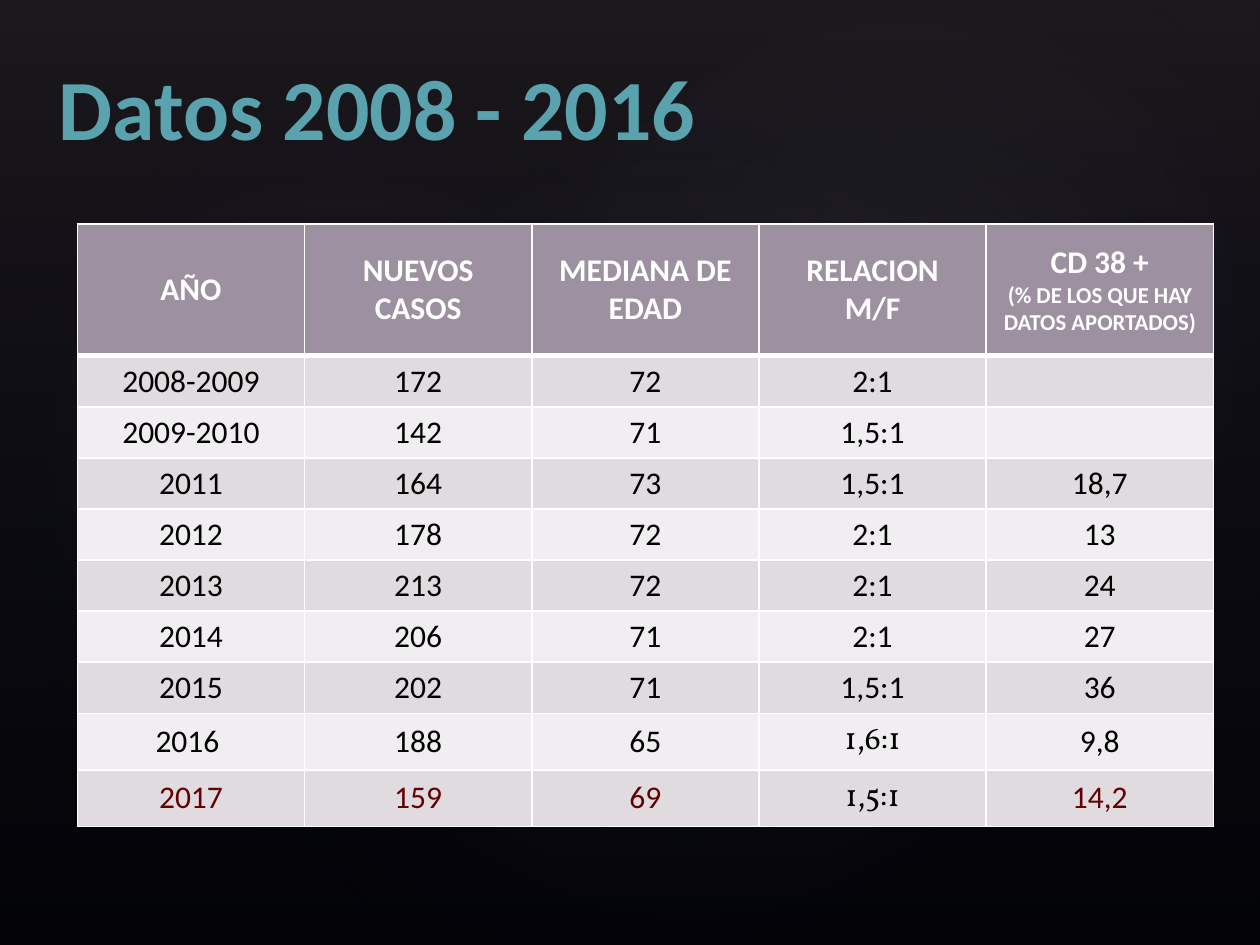
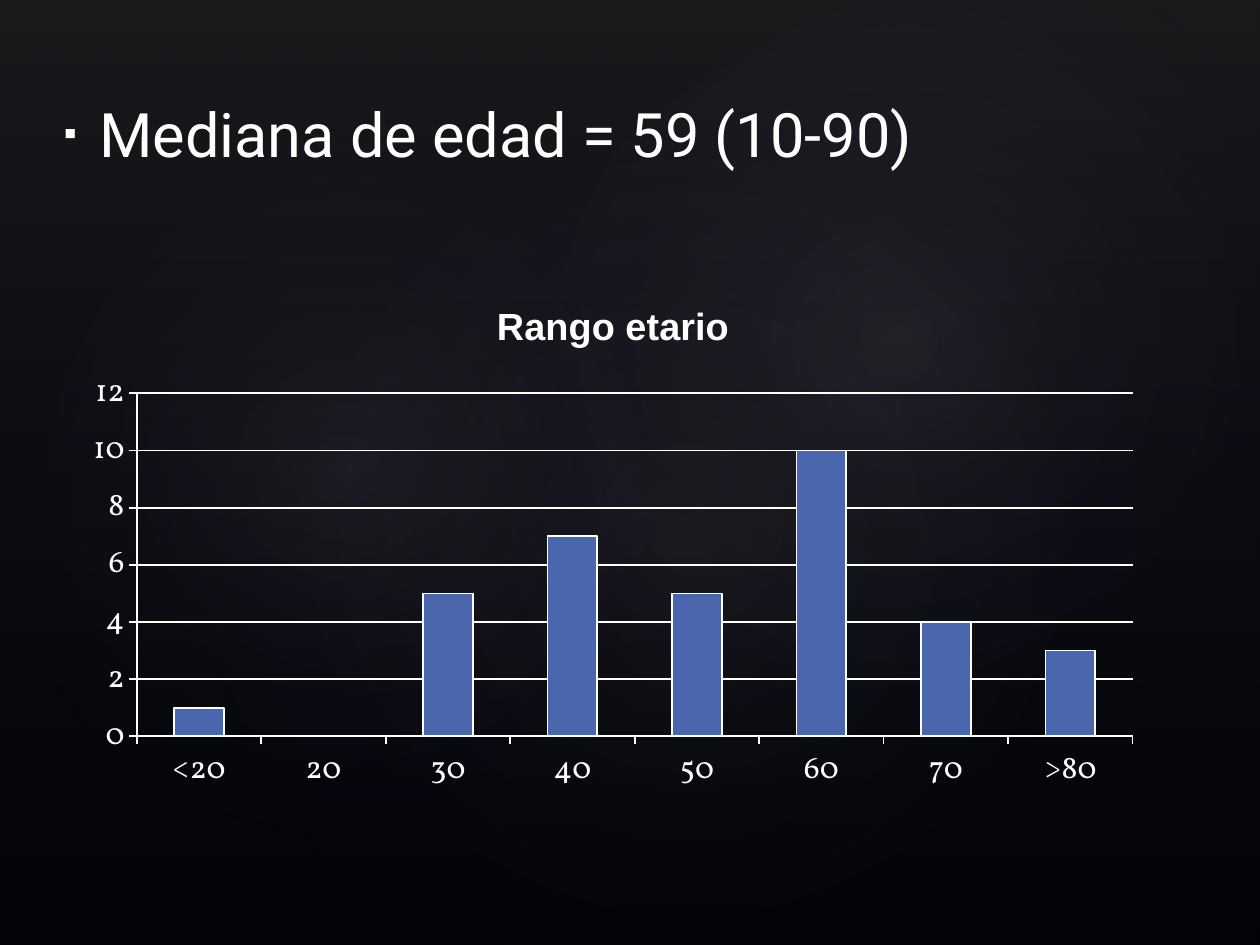
from pptx import Presentation
from pptx.chart.data import CategoryChartData
from pptx.dml.color import RGBColor
from pptx.enum.chart import XL_CHART_TYPE, XL_TICK_MARK
from pptx.enum.shapes import MSO_SHAPE
from pptx.enum.text import MSO_ANCHOR, PP_ALIGN
from pptx.oxml import parse_xml
from pptx.oxml.ns import qn
from pptx.util import Cm, Pt

NS = 'xmlns:a="http://schemas.openxmlformats.org/drawingml/2006/main"'
CHART_NS = 'xmlns:c="http://schemas.openxmlformats.org/drawingml/2006/chart"'

HUES = {
    "black": "000000", "white": "FFFFFF", "title": "5AA2AE", "red": "620002",
    "head": "9D90A0", "odd": "DFDBDF", "even": "F0EEF0", "bar": "4A66AC",
    "dusk": "504652", "navy": "242852", "glow": "C4BCC6",
}

# Font formats
TITLE = {"name": "Calibri", "size": Pt(49), "bold": True}
POINT = {"name": "Roboto", "size": Pt(35), "bold": False}
HEAD = {"name": "Calibri", "size": Pt(18), "bold": True}
NOTE = {**HEAD, "size": Pt(13)}
BODY = {**HEAD, "bold": False}
SERIF = {**BODY, "name": "Vollkorn"}
CAPTION = {"name": "Arial", "size": Pt(21.6), "bold": True}

# Glows: left, top, width, height, turn, opacity in percent
GLOWS = [
    (3.81, 2.9, 20.12, 15.85, 328.7, 7),
    (-0.76, 3.25, 15.39, 12.45, 294.3, 8),
    (9.09, 0.33, 18.01, 13.21, 328.7, 8),
]

HEADS = ["AÑO", "NUEVOS CASOS", "MEDIANA DE EDAD", "RELACION M/F",
         "CD 38 +\n(% DE LOS QUE HAY DATOS APORTADOS)"]
ROWS = [
    ["2008-2009", "172", "72", "2:1", ""],
    ["2009-2010", "142", "71", "1,5:1", ""],
    ["2011", "164", "73", "1,5:1", "18,7"],
    ["2012", "178", "72", "2:1", "13"],
    ["2013", "213", "72", "2:1", "24"],
    ["2014", "206", "71", "2:1", "27"],
    ["2015", "202", "71", "1,5:1", "36"],
    ["2016 ", "188", "65", "1,6:1", "9,8"],
    ["2017", "159", "69", "1,5:1", "14,2"],
]
RATIO = 3  # column of the M/F ratio

AGES = ["<20", "20", "30", "40", "50", "60", "70", ">80"]
COUNTS = [1, 0, 5, 7, 5, 10, 4, 3]


def hue(name):
    return RGBColor.from_string(HUES[name])


def put(item, values):
    for key, value in values.items():
        setattr(item, key, value)


def ink(font, style, color):
    put(font, style)
    font.color.rgb = hue(color)


def paint(fill, color):
    fill.solid()
    fill.fore_color.rgb = hue(color)


def stroke(line, points=1):
    line.width = Pt(points)
    paint(line.fill, "white")


def fade(shape, stops, form):
    """Fill with a gradient; stops are (place, colour, opacity) in percent."""
    marks = "".join(
        f'<a:gs pos="{place * 1000}"><a:srgbClr val="{HUES[color]}">'
        f'<a:alpha val="{alpha * 1000}"/></a:srgbClr></a:gs>'
        for place, color, alpha in stops)
    shape.fill.background()
    props = shape.element.spPr
    props.replace(props.find(qn("a:noFill")), parse_xml(
        f'<a:gradFill {NS} rotWithShape="1"><a:gsLst>{marks}</a:gsLst>{form}</a:gradFill>'))


def add_form(slide, kind, box):
    shape = slide.shapes.add_shape(kind, *map(Cm, box))
    shape.shadow.inherit = False
    shape.line.fill.background()
    return shape


def add_slide(deck):
    """Blank slide with the shared dark backdrop."""
    slide = deck.slides.add_slide(deck.slide_layouts[6])
    paint(slide.background.fill, "black")
    veil = add_form(slide, MSO_SHAPE.RECTANGLE, (0, 0, 25.4, 19.05))
    fade(veil, [(0, "dusk", 36), (100, "navy", 10)], '<a:lin ang="5400000" scaled="0"/>')
    for *box, turn, alpha in GLOWS:
        glow = add_form(slide, MSO_SHAPE.OVAL, box)
        glow.rotation = turn
        fade(glow, [(0, "glow", alpha), (58, "navy", 0), (100, "navy", 0)],
             '<a:path path="circle"><a:fillToRect l="50000" t="50000" r="50000" b="50000"/></a:path>')
    return slide


def add_text(slide, box, text, style, color, frame):
    area = slide.shapes.add_textbox(*map(Cm, box)).text_frame
    put(area, {"word_wrap": True, **frame})
    para = area.paragraphs[0]
    run = para.add_run()
    run.text = text
    ink(run.font, style, color)
    return para


def add_bullet(para):
    para.space_before = Pt(7)
    props = para._p.get_or_add_pPr()
    put_xml = {"marL": Cm(0.76), "indent": Cm(-0.71)}
    for key, value in put_xml.items():
        props.set(key, str(int(value)))
    for mark in ('buSzPct {} val="60000"', 'buFont {} typeface="Arial"', 'buChar {} char="▪"'):
        props.append(parse_xml(f"<a:{mark.format(NS)}/>"))


def edge(cell, top, base):
    """Draw white cell borders; top and base are widths in points."""
    props = cell._tc.get_or_add_tcPr()
    for side, width in {"L": 1, "R": 1, "T": top, "B": base}.items():
        props.append(parse_xml(
            f'<a:ln{side} {NS} w="{Pt(width)}"><a:solidFill>'
            f'<a:srgbClr val="{HUES["white"]}"/></a:solidFill></a:ln{side}>'))


def fill_cell(cell, text, styles, color, back, top, base):
    put(cell, {"vertical_anchor": MSO_ANCHOR.MIDDLE,
               "margin_left": Cm(0.33), "margin_right": Cm(0.33)})
    edge(cell, top, base)
    paint(cell.fill, back)
    cell.text = text
    for para, style in zip(cell.text_frame.paragraphs, styles):
        para.alignment = PP_ALIGN.CENTER
        ink(para.font, style, color)
        for run in para.runs:
            ink(run.font, style, color)


def add_grid(slide):
    rows, cols = len(ROWS) + 1, len(HEADS)
    table = slide.shapes.add_table(
        rows, cols, Cm(1.56), Cm(4.52), Cm(4.58 * cols), Cm(11.92)).table
    for col in table.columns:
        col.width = Cm(4.58)
    for i, row in enumerate(table.rows):
        row.height = Cm(1.03 if i else 2.65)

    # Header row
    for j, text in enumerate(HEADS):
        fill_cell(table.cell(0, j), text, (HEAD, NOTE), "white", "head", 1, 3)

    # Data rows: serif ratio in the last two, red for the latest year
    for i, row in enumerate(ROWS, 1):
        for j, text in enumerate(row):
            serif = j == RATIO and i >= len(ROWS) - 1
            red = i == len(ROWS) and not serif
            fill_cell(table.cell(i, j), text, [SERIF if serif else BODY],
                      "red" if red else "black", "odd" if i % 2 else "even",
                      3 if i == 1 else 1, 1)


def add_bars(slide):
    data = CategoryChartData()
    data.categories = AGES
    data.add_series("Rango etario", COUNTS)
    chart = slide.shapes.add_chart(
        XL_CHART_TYPE.COLUMN_CLUSTERED, Cm(1.45), Cm(5.59), Cm(21.82), Cm(10.64), data).chart
    chart.has_legend = False
    ink(chart.font, SERIF, "white")

    # Title
    chart.has_title = True
    frame = chart.chart_title.text_frame
    frame.text = "Rango etario"
    ink(frame.paragraphs[0].runs[0].font, CAPTION, "white")
    chart.chart_title.include_in_layout = False

    # Axes
    put(chart.value_axis, {"minimum_scale": 0, "maximum_scale": 12, "major_unit": 2,
                           "has_major_gridlines": True})
    stroke(chart.value_axis.major_gridlines.format.line)
    for axis in (chart.category_axis, chart.value_axis):
        axis.major_tick_mark = XL_TICK_MARK.OUTSIDE
        stroke(axis.format.line)

    # Bars
    plot = chart.plots[0]
    put(plot, {"gap_width": 150, "vary_by_categories": False})
    bars = plot.series[0]
    paint(bars.format.fill, "bar")
    stroke(bars.format.line)

    # Place of the plot within the chart
    area = chart._chartSpace.chart.plotArea
    for old in area.findall(qn("c:layout")):
        area.remove(old)
    spots = {"x": 0.06, "y": 0.22, "w": 0.92, "h": 0.65}
    marks = "".join(f'<c:{key} val="{value}"/>' for key, value in spots.items())
    area.insert(0, parse_xml(
        f'<c:layout {CHART_NS}><c:manualLayout><c:layoutTarget val="inner"/>'
        f'<c:xMode val="edge"/><c:yMode val="edge"/>{marks}</c:manualLayout></c:layout>'))


def main():
    deck = Presentation()
    put(deck, {"slide_width": Cm(25.4), "slide_height": Cm(19.05)})

    # Yearly data
    slide = add_slide(deck)
    add_grid(slide)
    add_text(slide, (0.94, 0.76, 20.96, 2.54), "Datos 2008 - 2016", TITLE, "title",
             {"vertical_anchor": MSO_ANCHOR.BOTTOM})

    # Age ranges
    slide = add_slide(deck)
    para = add_text(slide, (0.99, 0.81, 21.16, 4.8), "Mediana de edad = 59 (10-90)",
                    POINT, "white",
                    {"vertical_anchor": MSO_ANCHOR.MIDDLE, "margin_bottom": Cm(1.2)})
    add_bullet(para)
    add_bars(slide)

    deck.save("out.pptx")


if __name__ == "__main__":
    main()
